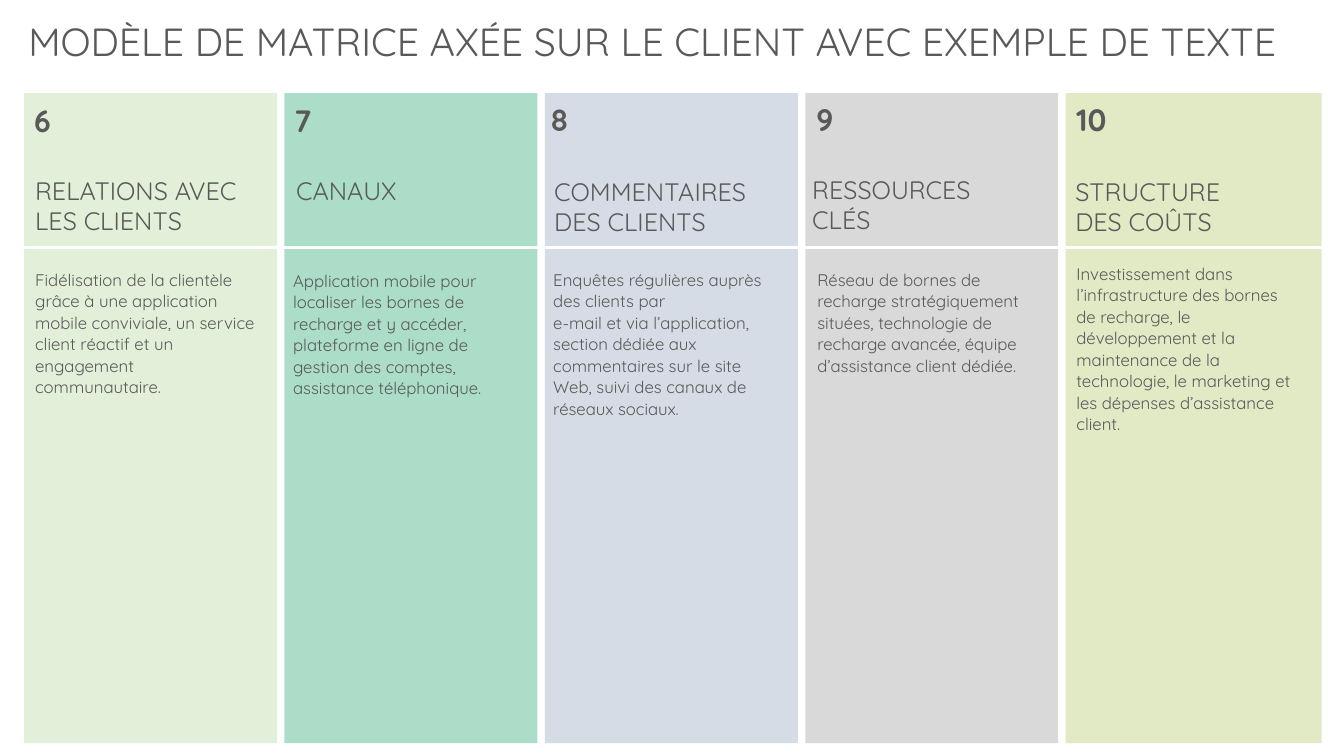
from pptx import Presentation
from pptx.dml.color import RGBColor
from pptx.enum import shapes, text
from pptx.oxml.ns import qn
from pptx.util import Pt
from lxml import etree

INK = RGBColor(0x59, 0x59, 0x59)
WHITE = RGBColor(0xFF, 0xFF, 0xFF)
LIGHT_GREEN = RGBColor(0xE2, 0xF0, 0xD9)
MINT = RGBColor(0xAB, 0xDD, 0xC9)
BLUE_GREY = RGBColor(0xD6, 0xDC, 0xE5)
GREY = RGBColor(0xD9, 0xD9, 0xD9)
LIME = RGBColor(0xE1, 0xE9, 0xC5)
FONT = "Quicksand"

TITLE = "MODÈLE DE MATRICE AXÉE SUR LE CLIENT AVEC EXEMPLE DE TEXTE"
COLUMNS = [
    dict(colour=LIGHT_GREEN, width=180.7,
         number="6", number_box=(17.3, 67, 33, 46),
         heading="RELATIONS AVEC LES CLIENTS", heading_box=(18, 121.7, 180, 51),
         details="Fidélisation de la clientèle grâce à une application mobile "
                 "conviviale, un service client réactif et un engagement communautaire.",
         details_box=(18, 187.9, 171.4, 113)),
    dict(colour=MINT, width=180.7,
         number="7", number_box=(203, 67, 33, 46),
         heading="CANAUX", heading_box=(204.5, 121.7, 180, 29),
         details="Application mobile pour localiser les bornes de recharge et y "
                 "accéder, plateforme en ligne de gestion des comptes, assistance téléphonique.",
         details_box=(202.3, 188.6, 169.2, 113)),
    dict(colour=BLUE_GREY, width=180.7,
         number="8", number_box=(386, 66.2, 33, 46),
         heading="COMMENTAIRES \nDES CLIENTS", heading_box=(388.8, 122.4, 180, 51),
         details="Enquêtes régulières auprès des clients par \ne-mail et via "
                 "l’application, section dédiée aux commentaires sur le site Web, "
                 "suivi des canaux de réseaux sociaux.",
         details_box=(388.1, 187.9, 169.2, 113)),
    dict(colour=GREY, width=180.7,
         number="9", number_box=(576, 66.2, 33, 46),
         heading="RESSOURCES \nCLÉS", heading_box=(573.1, 121, 180, 51),
         details="Réseau de bornes de recharge stratégiquement situées, technologie "
                 "de recharge avancée, équipe d’assistance client dédiée.",
         details_box=(576.7, 187.9, 171.4, 113)),
    dict(colour=LIME, width=182.9,
         number="10", number_box=(761.8, 66.2, 43.2, 46),
         heading="STRUCTURE \nDES COÛTS", heading_box=(761, 122.4, 176.4, 51),
         details="Investissement dans l’infrastructure des bornes de recharge, le "
                 "développement et la maintenance de la technologie, le marketing et "
                 "les dépenses d’assistance client.",
         details_box=(761.8, 183.6, 175, 147)),
]

LEFT, TOP, PITCH, HEIGHT = 17.2, 66.5, 186, 464.4
DIVIDER_Y, DIVIDER_RIGHT = 177.1, 950.4


def write(holder, words, size, bold=False, spacing=1.0, after=0):
    frame = holder.text_frame
    frame.word_wrap = True
    frame.auto_size = text.MSO_AUTO_SIZE.NONE
    frame.vertical_anchor = text.MSO_ANCHOR.TOP
    paragraph = frame.paragraphs[0]
    paragraph.text = words
    paragraph.alignment = text.PP_ALIGN.LEFT
    paragraph.line_spacing = spacing
    paragraph.space_before = Pt(0)
    paragraph.space_after = Pt(after)
    for run in paragraph.runs:
        run.font.name = FONT
        run.font.size = Pt(size)
        run.font.bold = bold
        run.font.color.rgb = INK


def points(box):
    return [Pt(length) for length in box]


deck = Presentation()
deck.slide_width, deck.slide_height = Pt(960), Pt(540)
slide = deck.slides.add_slide(deck.slide_layouts[5])

title = slide.shapes.title
title.left, title.top, title.width, title.height = points((13, 8.6, 932.4, 41))
write(title, TITLE, 28)

for index, column in enumerate(COLUMNS):
    panel = slide.shapes.add_shape(
        shapes.MSO_SHAPE.RECTANGLE,
        *points((LEFT + index * PITCH, TOP, column["width"], HEIGHT)))
    panel.shadow.inherit = False
    panel.fill.solid()
    panel.fill.fore_color.rgb = column["colour"]
    panel.line.fill.background()

divider = slide.shapes.add_connector(
    shapes.MSO_CONNECTOR.STRAIGHT,
    *points((LEFT, DIVIDER_Y, DIVIDER_RIGHT, DIVIDER_Y)))
divider.line.color.rgb = WHITE
divider.line.width = Pt(2.25)
etree.SubElement(divider._element.spPr, qn("a:effectLst"))

STYLES = {
    "heading": dict(size=18),
    "number": dict(size=22, bold=True, spacing=1.07, after=8),
    "details": dict(size=12, spacing=1.07, after=8),
}
for part, style in STYLES.items():
    for column in COLUMNS:
        label = slide.shapes.add_textbox(*points(column[part + "_box"]))
        write(label, column[part], **style)

deck.save("out.pptx")
